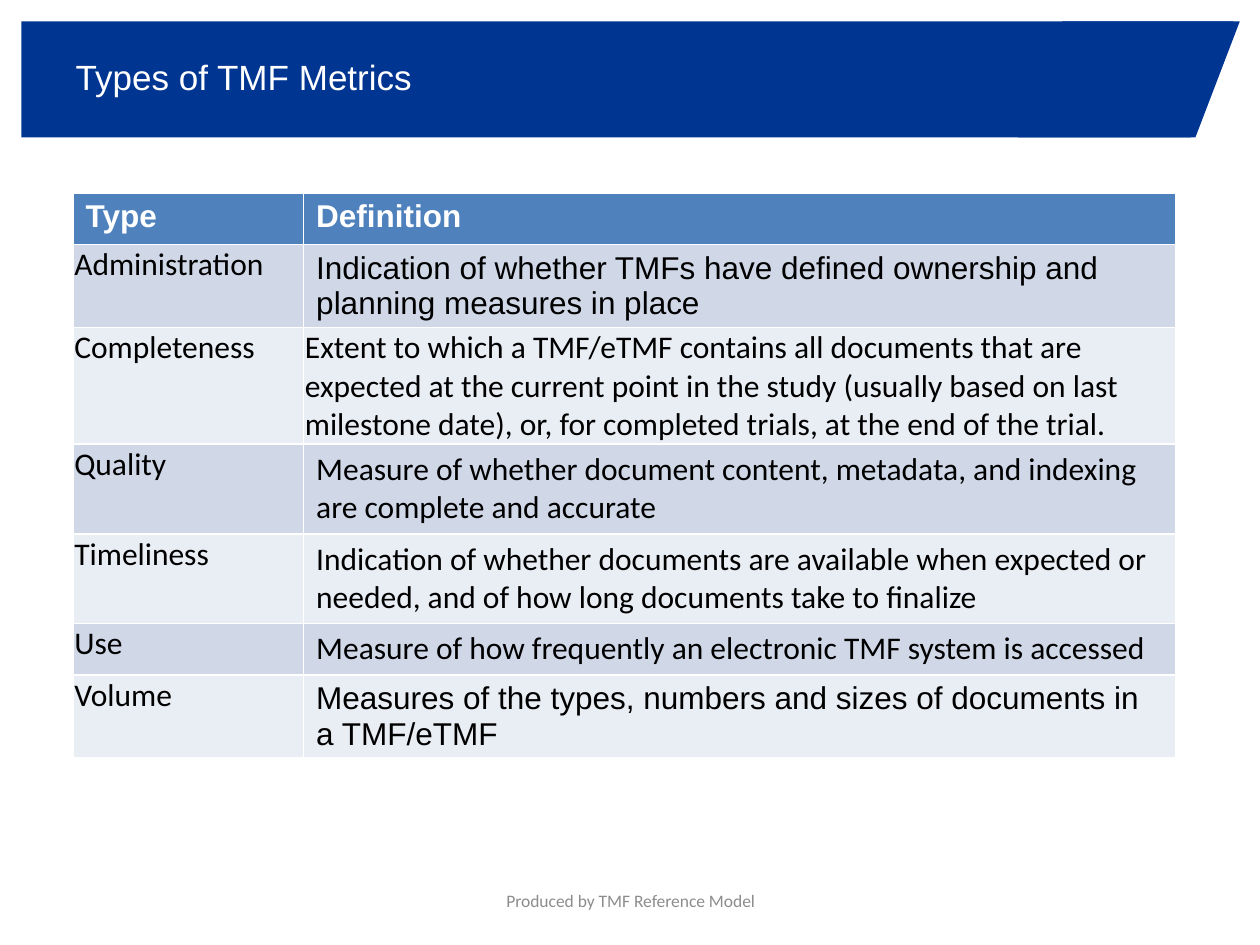
from pptx import Presentation
from pptx.dml.color import RGBColor
from pptx.enum.shapes import MSO_SHAPE
from pptx.enum.text import MSO_ANCHOR, PP_ALIGN
from pptx.util import Inches, Pt

NAVY = RGBColor(0x00, 0x35, 0x91)
HEADER_BLUE = RGBColor(0x4F, 0x81, 0xBD)
BAND_DARK = RGBColor(0xD0, 0xD8, 0xE8)
BAND_LIGHT = RGBColor(0xE9, 0xED, 0xF4)
WHITE = RGBColor(0xFF, 0xFF, 0xFF)
BLACK = RGBColor(0x00, 0x00, 0x00)
GREY = RGBColor(0x8C, 0x8C, 0x8C)

TIGHT = {"margin_left": Inches(0.01), "margin_top": Inches(0.01),
         "margin_right": Inches(0.01), "margin_bottom": 0}
ROOMY = {}

# Type, definition, definition font, definition margins
METRICS = [
    ("Administration", "Indication of whether TMFs have defined ownership and "
     "planning measures in place", "Arial", ROOMY),
    ("Completeness", "Extent to which a TMF/eTMF contains all documents that are "
     "expected at the current point in the study (usually based on last "
     "milestone date), or, for completed trials, at the end of the trial.",
     "Calibri", TIGHT),
    ("Quality", "Measure of whether document content, metadata, and indexing "
     "are complete and accurate", "Calibri", ROOMY),
    ("Timeliness", "Indication of whether documents are available when expected "
     "or needed, and of how long documents take to finalize", "Calibri", ROOMY),
    ("Use", "Measure of how frequently an electronic TMF system is accessed",
     "Calibri", ROOMY),
    ("Volume", "Measures of the types, numbers and sizes of documents in "
     "a TMF/eTMF", "Arial", ROOMY),
]


def apply(target, values):
    for name, value in values.items():
        setattr(target, name, value)


def write(frame, text, font_name, size, color, bold=False, align=PP_ALIGN.LEFT):
    paragraph = frame.paragraphs[0]
    paragraph.alignment = align
    run = paragraph.add_run()
    run.text = text
    apply(run.font, {"name": font_name, "size": Pt(size), "bold": bold})
    run.font.color.rgb = color


def paint(shape, color):
    shape.shadow.inherit = False
    shape.fill.solid()
    shape.fill.fore_color.rgb = color
    shape.line.fill.background()


def add_banner(slide, left, top, width, height):
    # Bar with a slanted right end
    slant, overhang = Inches(0.34), Inches(0.05)
    right, bottom = left + width - overhang, top + height
    outline = slide.shapes.build_freeform(left, top, scale=1.0)
    outline.add_line_segments(
        [(left, bottom), (right - slant, bottom), (right, top)], close=True)
    paint(outline.convert_to_shape(), NAVY)
    # Slanted tip
    tip_width = Inches(1.76)
    tip = slide.shapes.add_shape(MSO_SHAPE.FLOWCHART_DATA,
                                 left + width - tip_width, top, tip_width, height)
    paint(tip, NAVY)


def add_title(slide, left, top, width, height):
    title = slide.shapes.title
    apply(title, {"left": left, "top": top, "width": width, "height": height})
    apply(title.text_frame, {"vertical_anchor": MSO_ANCHOR.MIDDLE,
                             "word_wrap": True})
    write(title.text_frame, "Types of TMF Metrics", "Arial", 20, WHITE)
    # Bring the title in front of the banner
    title.element.getparent().append(title.element)


def fill_cell(cell, text, font_name, fill, margins, color=BLACK, bold=False):
    cell.fill.solid()
    cell.fill.fore_color.rgb = fill
    apply(cell, margins)
    write(cell.text_frame, text, font_name, 18, color, bold)


def add_metrics_table(slide, left, top, width, row_height):
    rows = len(METRICS) + 1
    table = slide.shapes.add_table(rows, 2, left, top, width,
                                   row_height * rows).table
    type_width = Inches(1.83)
    table.columns[0].width = type_width
    table.columns[1].width = width - type_width

    # Header row
    for column, heading in enumerate(("Type", "Definition")):
        fill_cell(table.cell(0, column), heading, "Arial", HEADER_BLUE, ROOMY,
                  WHITE, bold=True)

    # Banded metric rows
    for row, (kind, definition, font_name, margins) in enumerate(METRICS, 1):
        band = BAND_DARK if row % 2 else BAND_LIGHT
        fill_cell(table.cell(row, 0), kind, "Calibri", band, TIGHT)
        fill_cell(table.cell(row, 1), definition, font_name, band, margins)


def add_footer(slide, left, top, width, height):
    frame = slide.shapes.add_textbox(left, top, width, height).text_frame
    apply(frame, {"word_wrap": True, "vertical_anchor": MSO_ANCHOR.MIDDLE})
    write(frame, "Produced by TMF Reference Model", "Calibri", 10, GREY,
          align=PP_ALIGN.CENTER)


def main():
    prs = Presentation()
    prs.slide_width, prs.slide_height = Inches(10), Inches(7.5)
    slide = prs.slides.add_slide(prs.slide_layouts[5])
    add_banner(slide, Inches(0.17), Inches(0.17), Inches(9.67), Inches(0.92))
    add_title(slide, Inches(0.5), Inches(0.3), Inches(6.75), Inches(0.62))
    add_metrics_table(slide, Inches(0.58), Inches(1.53), Inches(8.75), Inches(0.41))
    add_footer(slide, Inches(3.42), Inches(6.95), Inches(3.17), Inches(0.4))
    prs.save("out.pptx")


if __name__ == "__main__":
    main()
